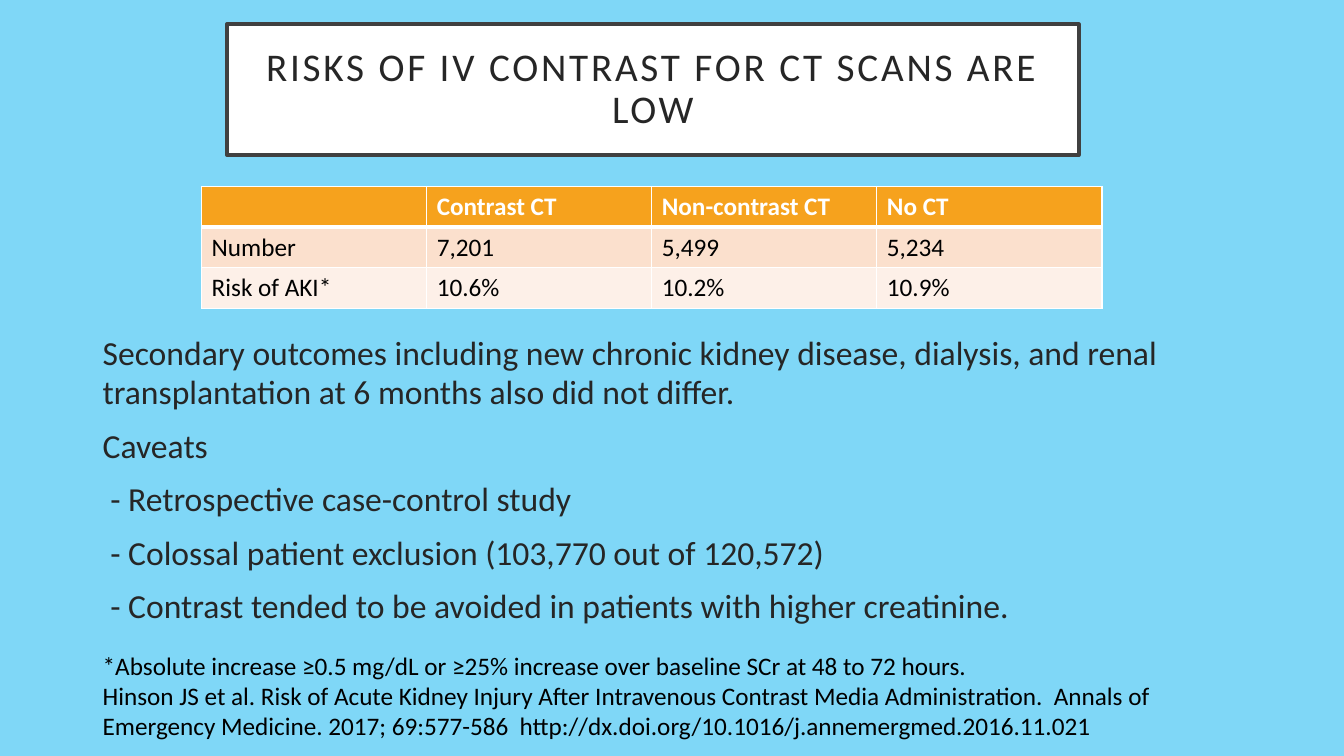
from dataclasses import dataclass

from lxml import etree
from pptx import Presentation
from pptx.dml.color import RGBColor
from pptx.enum.shapes import MSO_SHAPE
from pptx.enum.text import MSO_ANCHOR, MSO_AUTO_SIZE, PP_ALIGN
from pptx.oxml.ns import qn
from pptx.util import Inches, Pt

RECTANGLE = MSO_SHAPE.RECTANGLE
MIDDLE, TOP = MSO_ANCHOR.MIDDLE, MSO_ANCHOR.TOP
CENTER, LEFT = PP_ALIGN.CENTER, PP_ALIGN.LEFT
GROW, FIXED = MSO_AUTO_SIZE.SHAPE_TO_FIT_TEXT, MSO_AUTO_SIZE.NONE


@dataclass(frozen=True)
class Theme:
    """Colours, font and type sizes of the slide."""
    font: str = "Calibri"
    background: str = "7FD7F7"
    white: str = "FFFFFF"
    black: str = "000000"
    ink: str = "262626"
    frame: str = "404040"
    header: str = "F6A21D"
    bands: tuple = ("FBE0CD", "FDF0E8")
    title_size: int = 28
    body_size: int = 24
    small_size: int = 18


def apply(target, values):
    """Set every attribute named in values on target."""
    for name, value in values.items():
        setattr(target, name, value)


class SlideBuilder:
    """Adds styled elements to one slide."""

    def __init__(self, slide, theme):
        """Keep the slide and theme, and paint the background."""
        self.slide = slide
        self.theme = theme
        self.paint(slide.background.fill, theme.background)

    def paint(self, fill, color):
        """Make a fill solid in one colour."""
        fill.solid()
        fill.fore_color.rgb = RGBColor.from_string(color)

    def add_paragraphs(self, frame, texts, size, color, paragraph_format, bold=False, tracking=0):
        """Put one paragraph per text into a text frame."""
        for index, text in enumerate(texts):
            paragraph = frame.add_paragraph() if index else frame.paragraphs[0]
            apply(paragraph, paragraph_format)
            run = paragraph.add_run()
            run.text = text
            apply(run.font, {"name": self.theme.font, "size": Pt(size), "bold": bold})
            run.font.color.rgb = RGBColor.from_string(color)
            if tracking:
                run._r.get_or_add_rPr().set("spc", str(tracking * 100))

    def title(self, text, box):
        """Add the framed title."""
        shape = self.slide.shapes.add_shape(RECTANGLE, *map(Inches, box))
        shape.shadow.inherit = False
        self.paint(shape.fill, self.theme.white)
        shape.line.color.rgb = RGBColor.from_string(self.theme.frame)
        shape.line.width = Pt(2.5)
        sides = ("left", "top", "right", "bottom")
        apply(shape.text_frame, {f"margin_{side}": Inches(0.2) for side in sides})
        apply(shape.text_frame, {"word_wrap": True, "vertical_anchor": MIDDLE})
        self.add_paragraphs(shape.text_frame, [text], self.theme.title_size, self.theme.ink,
                            {"alignment": CENTER, "line_spacing": 0.9}, tracking=2)

    def text(self, texts, box, size, color, paragraph_format, auto_size=FIXED):
        """Add a wrapped text box."""
        frame = self.slide.shapes.add_textbox(*map(Inches, box)).text_frame
        apply(frame, {"word_wrap": True, "auto_size": auto_size, "vertical_anchor": TOP})
        self.add_paragraphs(frame, texts, size, color, {"alignment": LEFT, **paragraph_format})

    def border(self, cell, widths):
        """Draw white cell borders with a width in points for each side."""
        properties = cell._tc.get_or_add_tcPr()
        for index, (side, width) in enumerate(widths.items()):
            line = etree.Element(qn(f"a:ln{side}"), w=str(Pt(width)))
            fill = etree.SubElement(line, qn("a:solidFill"))
            etree.SubElement(fill, qn("a:srgbClr"), val=self.theme.white)
            properties.insert(index, line)

    def table(self, rows, box):
        """Add a table with a header row and alternating bands."""
        theme = self.theme
        graphic = self.slide.shapes.add_table(len(rows), len(rows[0]), *map(Inches, box))
        table = graphic.table
        table.horz_banding = False
        for row_index, row in enumerate(rows):
            header = row_index == 0
            fill = theme.header if header else theme.bands[(row_index - 1) % 2]
            color = theme.white if header else theme.black
            for column_index, text in enumerate(row):
                cell = table.cell(row_index, column_index)
                self.paint(cell.fill, fill)
                self.border(cell, {"L": 1, "R": 1, "T": 3 if row_index == 1 else 1,
                                   "B": 3 if header else 1})
                if text:
                    self.add_paragraphs(cell.text_frame, [text], theme.small_size, color,
                                        {"alignment": LEFT}, bold=header)


def main():
    """Build the slide and save it."""
    presentation = Presentation()
    apply(presentation, {"slide_width": Inches(13.33), "slide_height": Inches(7.5)})
    theme = Theme()
    builder = SlideBuilder(presentation.slides.add_slide(presentation.slide_layouts[6]), theme)
    builder.title("RISKS OF IV CONTRAST FOR CT SCANS ARE LOW", (2.25, 0.24, 8.45, 1.3))
    builder.text([
        "Secondary outcomes including new chronic kidney disease, dialysis, and renal "
        "transplantation at 6 months also did not differ.",
        "Caveats",
        " - Retrospective case-control study",
        " - Colossal patient exclusion (103,770 out of 120,572)",
        " - Contrast tended to be avoided in patients with higher creatinine.",
    ], (0.92, 3.26, 11.37, 4.17), theme.body_size, theme.ink,
        {"space_before": Pt(10), "line_spacing": 0.98})
    builder.text([
        "*Absolute increase ≥0.5 mg/dL or ≥25% increase over baseline SCr at 48 to 72 hours.",
        "Hinson JS et al. Risk of Acute Kidney Injury After Intravenous Contrast Media "
        "Administration.  Annals of Emergency Medicine. 2017; 69:577-586  "
        "http://dx.doi.org/10.1016/j.annemergmed.2016.11.021",
    ], (0.92, 6.4, 11.13, 1.02), theme.small_size, theme.black, {}, GROW)
    builder.table([
        ("", "Contrast CT", "Non-contrast CT", "No CT"),
        ("Number", "7,201", "5,499", "5,234"),
        ("Risk of AKI*", "10.6%", "10.2%", "10.9%"),
    ], (2, 1.85, 8.93, 1.21))
    presentation.save("out.pptx")


if __name__ == "__main__":
    main()
